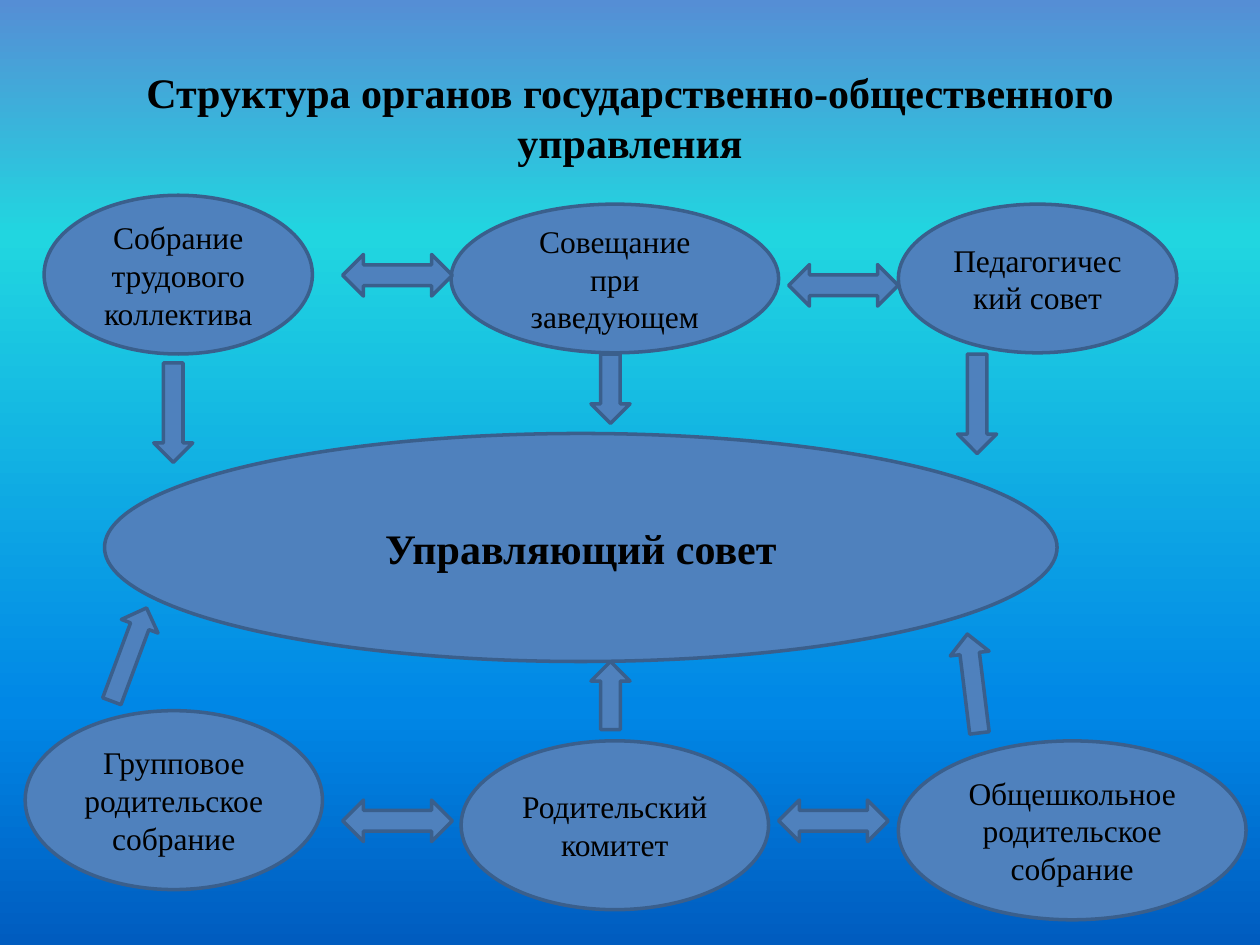
from dataclasses import dataclass

from lxml import etree
from pptx import Presentation
from pptx import util as u
from pptx.dml.color import RGBColor
from pptx.enum import shapes, text
from pptx.oxml import ns


@dataclass(frozen=True)
class Theme:
    font: str = "Times New Roman"
    ink: str = "000000"
    fill: str = "4F81BD"
    outline: str = "3A5F8C"
    outline_width: float = 2
    heading_size: int = 24
    body_size: int = 18
    backdrop: tuple = ((0, "558ED5"), (25, "21D6E0"), (75, "0087E6"), (100, "005CBF"))


THEME = Theme()

COUNCIL = ("Управляющий совет", (0.83, 3.44, 7.56, 1.81))
BODIES = (
    ("Совещание при заведующем", (3.58, 1.62, 2.6, 1.18)),
    ("Собрание трудового коллектива", (0.35, 1.55, 2.13, 1.26)),
    ("Педагогический совет", (7.13, 1.62, 2.21, 1.18)),
    ("Групповое родительское собрание", (0.2, 5.64, 2.36, 1.42)),
    ("Общешкольное родительское собрание", (7.13, 5.88, 2.76, 1.42)),
    ("Родительский комитет", (3.66, 5.88, 2.44, 1.34)),
)
EXCHANGES = ((6.26, 2.1), (2.72, 2.02), (2.72, 6.35), (6.18, 6.35))
REPORTS = (
    (7.6, 2.81, 0.79, 0),
    (4.69, 2.81, 0.55, 0),
    (1.22, 2.88, 0.79, 0),
    (4.69, 5.25, 0.54, 180),
    (0.87, 4.8, 0.79, 200.4),
    (7.57, 5.03, 0.79, 173),
)


def paint_backdrop(slide):
    fill = slide.background.fill
    fill.gradient()
    fill.gradient_angle = 270
    stops = slide.element.find(".//" + ns.qn("a:gsLst"))
    for stop in list(stops):
        stops.remove(stop)
    for percent, color in THEME.backdrop:
        stop = etree.SubElement(stops, ns.qn("a:gs"), pos=str(percent * 1000))
        etree.SubElement(stop, ns.qn("a:srgbClr"), val=color)


def write(holder, wording, size=THEME.body_size, bold=False):
    frame = holder.text_frame
    frame.word_wrap = True
    frame.vertical_anchor = text.MSO_ANCHOR.MIDDLE
    paragraph = frame.paragraphs[0]
    paragraph.alignment = text.PP_ALIGN.CENTER
    run = paragraph.add_run()
    run.text = wording
    run.font.name = THEME.font
    run.font.size = u.Pt(size)
    run.font.bold = bold
    run.font.color.rgb = RGBColor.from_string(THEME.ink)


def add_title(slide, wording, box):
    title = slide.shapes.add_textbox(*map(u.Inches, box))
    write(title, wording, size=THEME.heading_size, bold=True)


def add_figure(slide, kind, box, rotation=0):
    figure = slide.shapes.add_shape(kind, *map(u.Inches, box))
    figure.rotation = rotation
    figure.shadow.inherit = False
    figure.fill.solid()
    figure.fill.fore_color.rgb = RGBColor.from_string(THEME.fill)
    figure.line.color.rgb = RGBColor.from_string(THEME.outline)
    figure.line.width = u.Pt(THEME.outline_width)
    return figure


def add_body(slide, wording, box, **style):
    write(add_figure(slide, shapes.MSO_SHAPE.OVAL, box), wording, **style)


def add_exchange(slide, left, top):
    add_figure(slide, shapes.MSO_SHAPE.LEFT_RIGHT_ARROW, (left, top, 0.87, 0.33))


def add_report(slide, left, top, length, rotation):
    add_figure(slide, shapes.MSO_SHAPE.DOWN_ARROW, (left, top, 0.31, length), rotation)


def main():
    deck = Presentation()
    deck.slide_width, deck.slide_height = u.Inches(10), u.Inches(7.5)
    slide = deck.slides.add_slide(deck.slide_layouts[6])
    paint_backdrop(slide)
    add_title(
        slide,
        "Структура органов государственно-общественного управления",
        (0.5, 0.3, 9, 1.25),
    )
    add_body(slide, *COUNCIL, size=THEME.heading_size, bold=True)
    for wording, box in BODIES:
        add_body(slide, wording, box)
    for place in EXCHANGES:
        add_exchange(slide, *place)
    for report in REPORTS:
        add_report(slide, *report)
    deck.save("out.pptx")


if __name__ == "__main__":
    main()
